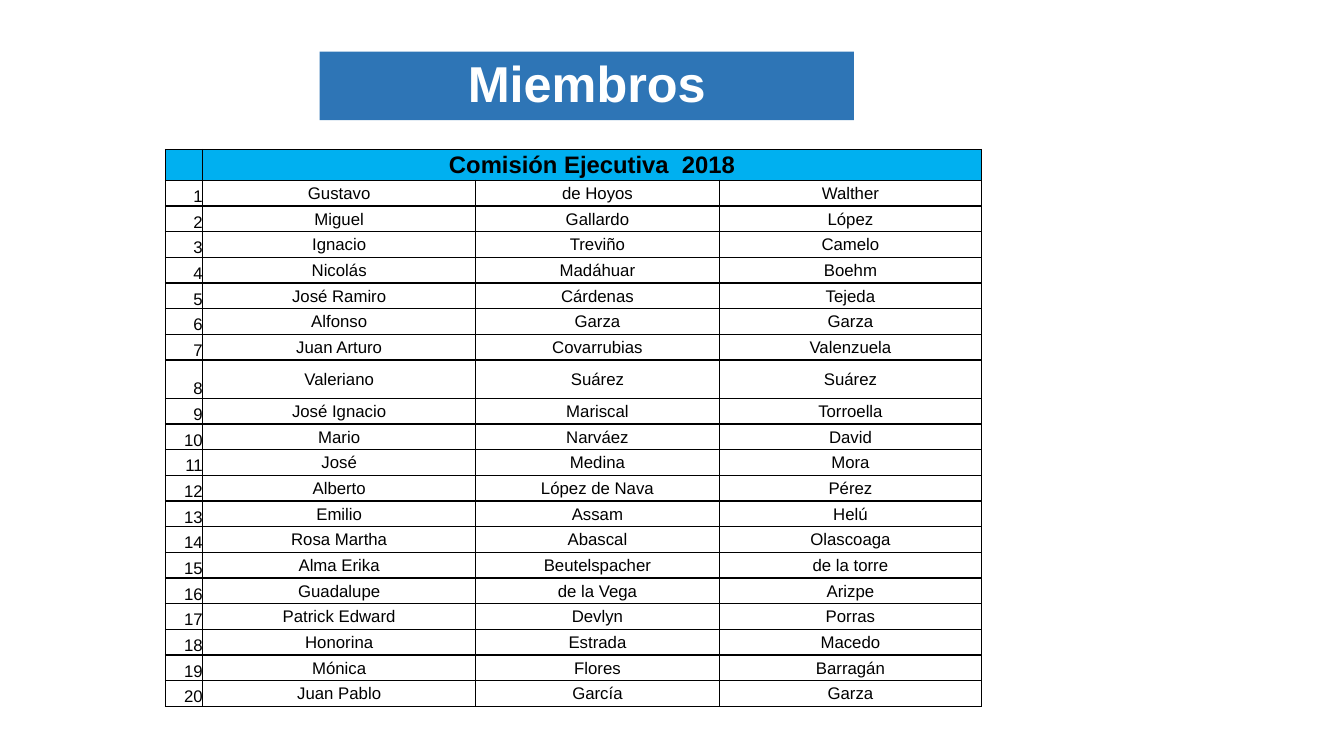
import pptx
import pptx.util
import pptx.dml.color
import pptx.enum.shapes
import pptx.enum.text
import pptx.oxml.ns
import lxml.etree

Pt = pptx.util.Pt
ALIGN = pptx.enum.text.PP_ALIGN
ANCHOR = pptx.enum.text.MSO_ANCHOR

TITLE = "Miembros"
HEADING = "Comisión Ejecutiva  2018"
MEMBERS = [
    ("Gustavo", "de Hoyos", "Walther"),
    ("Miguel", "Gallardo", "López"),
    ("Ignacio", "Treviño", "Camelo"),
    ("Nicolás", "Madáhuar", "Boehm"),
    ("José Ramiro", "Cárdenas", "Tejeda"),
    ("Alfonso", "Garza", "Garza"),
    ("Juan Arturo", "Covarrubias", "Valenzuela"),
    ("Valeriano", "Suárez", "Suárez"),
    ("José Ignacio", "Mariscal", "Torroella"),
    ("Mario", "Narváez", "David"),
    ("José", "Medina", "Mora"),
    ("Alberto", "López de Nava", "Pérez"),
    ("Emilio", "Assam", "Helú"),
    ("Rosa Martha", "Abascal", "Olascoaga"),
    ("Alma Erika", "Beutelspacher", "de la torre"),
    ("Guadalupe", "de la Vega", "Arizpe"),
    ("Patrick Edward", "Devlyn", "Porras"),
    ("Honorina", "Estrada", "Macedo"),
    ("Mónica", "Flores", "Barragán"),
    ("Juan Pablo", "García", "Garza"),
]

THEME = {
    "font": "Arial",
    "banner": "2E75B6", "heading": "00B0F0", "body": "FFFFFF",
    "ink": "000000", "light": "FFFFFF", "border": "000000",
    "title_size": 36, "heading_size": 17, "body_size": 12,
}

SLIDE_SIZE = (960, 540)
BANNER_BOX = (228.4, 36.9, 381.6, 49)
TABLE_LEFT, TABLE_TOP = 118.2, 106.8
COLUMN_WIDTHS = [26.6, 195, 174, 187.4]
HEADING_HEIGHT, MEMBER_HEIGHT, TALL_HEIGHT = 21.4, 18.36, 27.3
TALL_MEMBER = 8


def rgb(code):
    return pptx.dml.color.RGBColor.from_string(code)


def write(frame, text, size, color="ink", bold=False, align=ALIGN.CENTER, spacing=None):
    paragraph = frame.paragraphs[0]
    paragraph.alignment = align
    if spacing:
        paragraph.line_spacing = spacing
    run = paragraph.add_run()
    run.text = text
    run.font.name = THEME["font"]
    run.font.size = Pt(THEME[size])
    run.font.bold = bold
    run.font.color.rgb = rgb(THEME[color])


def style_cell(cell, fill, anchor=ANCHOR.MIDDLE, inset=0):
    cell.margin_left = cell.margin_right = cell.margin_top = Pt(inset)
    cell.margin_bottom = Pt(0)
    cell.vertical_anchor = anchor
    qn = pptx.oxml.ns.qn
    properties = cell._tc.get_or_add_tcPr()
    for side in ("lnL", "lnR", "lnT", "lnB"):
        border = lxml.etree.SubElement(properties, qn("a:" + side), w=str(Pt(1)))
        paint = lxml.etree.SubElement(border, qn("a:solidFill"))
        lxml.etree.SubElement(paint, qn("a:srgbClr"), val=THEME["border"])
    cell.fill.solid()
    cell.fill.fore_color.rgb = rgb(THEME[fill])


def add_members(slide):
    heights = [HEADING_HEIGHT] + [
        TALL_HEIGHT if number == TALL_MEMBER else MEMBER_HEIGHT
        for number in range(1, len(MEMBERS) + 1)
    ]
    table = slide.shapes.add_table(
        len(heights), len(COLUMN_WIDTHS), Pt(TABLE_LEFT), Pt(TABLE_TOP),
        Pt(sum(COLUMN_WIDTHS)), Pt(sum(heights))).table
    table.first_row = table.horz_banding = False
    for column, width in zip(table.columns, COLUMN_WIDTHS):
        column.width = Pt(width)
    for row, height in zip(table.rows, heights):
        row.height = Pt(height)

    for cell in table.rows[0].cells:
        style_cell(cell, "heading")
    heading = table.cell(0, 1)
    heading.merge(table.cell(0, len(COLUMN_WIDTHS) - 1))
    write(heading.text_frame, HEADING, "heading_size", bold=True)

    for number, names in enumerate(MEMBERS, 1):
        number_cell, *name_cells = table.rows[number].cells
        style_cell(number_cell, "body", anchor=ANCHOR.BOTTOM)
        write(number_cell.text_frame, str(number), "body_size", align=ALIGN.RIGHT)
        for cell, name in zip(name_cells, names):
            style_cell(cell, "body", inset=0.7)
            write(cell.text_frame, name, "body_size")


def add_banner(slide):
    banner = slide.shapes.add_shape(
        pptx.enum.shapes.MSO_SHAPE.RECTANGLE, *map(Pt, BANNER_BOX))
    banner.shadow.inherit = False
    banner.fill.solid()
    banner.fill.fore_color.rgb = rgb(THEME["banner"])
    banner.line.fill.background()
    frame = banner.text_frame
    frame.word_wrap = True
    frame.vertical_anchor = ANCHOR.MIDDLE
    frame.margin_left = frame.margin_right = Pt(7.2)
    frame.margin_top = frame.margin_bottom = Pt(7.2)
    write(frame, TITLE, "title_size", color="light", bold=True, spacing=0.9)


def main():
    deck = pptx.Presentation()
    deck.slide_width, deck.slide_height = map(Pt, SLIDE_SIZE)
    slide = deck.slides.add_slide(deck.slide_layouts[6])
    add_members(slide)
    add_banner(slide)
    deck.save("out.pptx")


if __name__ == "__main__":
    main()
